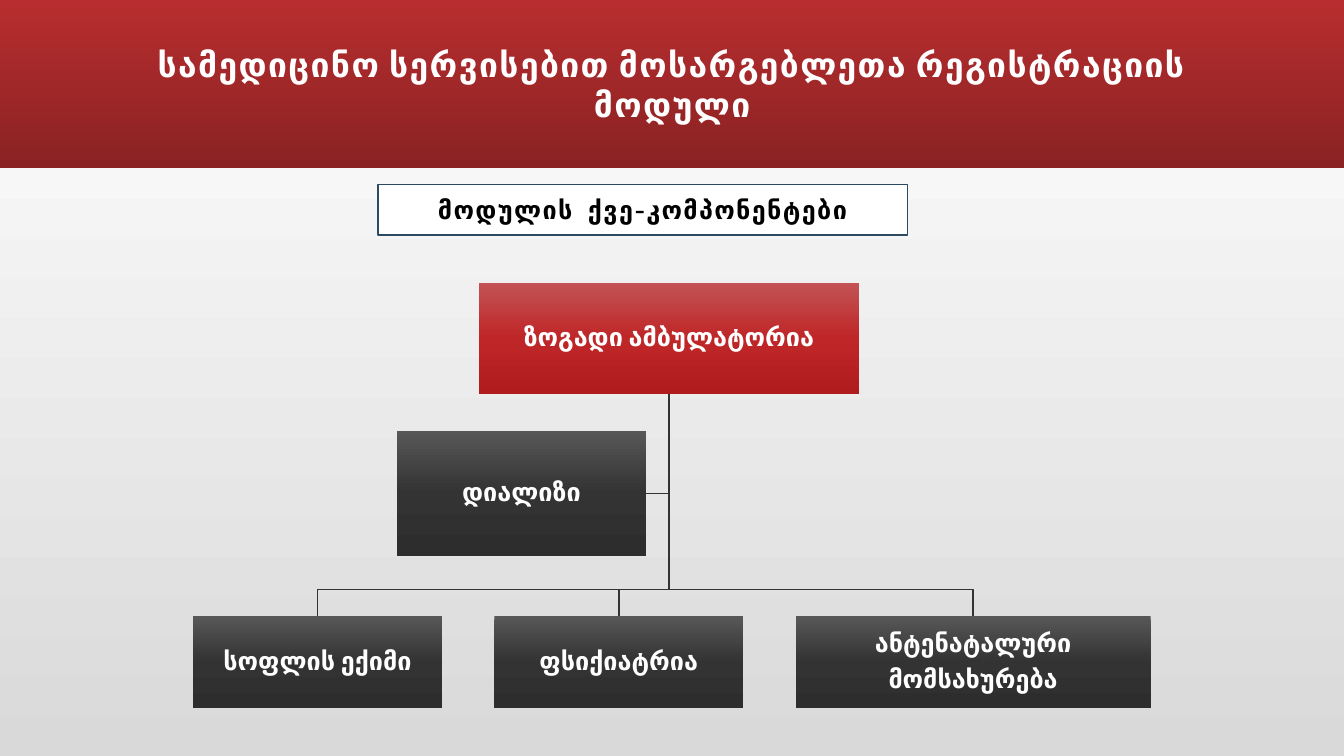
from lxml.etree import SubElement
from pptx import Presentation
from pptx.dml.color import RGBColor
from pptx.enum.shapes import MSO_SHAPE as Preset
from pptx.enum.text import MSO_ANCHOR as Anchor, MSO_AUTO_SIZE as AutoSize, PP_ALIGN as Align
from pptx.oxml.ns import qn
from pptx.util import Cm, Pt

WHITE = RGBColor(0xFF, 0xFF, 0xFF)
BLACK = RGBColor(0x00, 0x00, 0x00)
NAVY = RGBColor(0x2B, 0x4A, 0x63)
CHARCOAL = RGBColor(0x33, 0x33, 0x33)
PAGE_STOPS = (WHITE, RGBColor(0xD9, 0xD9, 0xD9))
BAND_STOPS = (RGBColor(0xB8, 0x2D, 0x2F), RGBColor(0x8A, 0x22, 0x23))
RED_STOPS = (RGBColor(0xC3, 0x53, 0x54), RGBColor(0xBF, 0x26, 0x28), RGBColor(0xB0, 0x1C, 0x1E))
DARK_STOPS = (RGBColor(0x57, 0x57, 0x57), CHARCOAL, RGBColor(0x2D, 0x2D, 0x2D))

FRAME_FORMAT = {"word_wrap": True, "auto_size": AutoSize.NONE, "vertical_anchor": Anchor.MIDDLE}
NODE_MARGINS = {f"margin_{side}": Cm(0.03) for side in ("left", "top", "right", "bottom")}
NODE_PARA = {"line_spacing": 0.9, "space_after": Pt(6.3)}


def apply_format(target, values):
    """Set every attribute named in a dict of format values."""
    for name, value in values.items():
        setattr(target, name, value)


def paint_gradient(fill, host, colors):
    """Fill from top to bottom with evenly spaced colours."""
    fill.gradient()
    fill.gradient_angle = 270
    stops = next(host.iter(qn("a:gsLst")))
    for stop in list(stops):
        stops.remove(stop)
    for index, color in enumerate(colors):
        position = 100000 * index // (len(colors) - 1)
        stop = SubElement(stops, qn("a:gs"), pos=str(position))
        SubElement(stop, qn("a:srgbClr"), val=str(color))


def write_text(shape, lines, size, color, tracking=0, para_format=None, margins=None):
    """Write centred bold lines into a shape."""
    frame = shape.text_frame
    apply_format(frame, {**FRAME_FORMAT, **(margins or {})})
    for index, line in enumerate(lines):
        para = frame.add_paragraph() if index else frame.paragraphs[0]
        apply_format(para, {"alignment": Align.CENTER, **(para_format or {})})
        span = para.add_run()
        span.text = line
        apply_format(span.font, {"name": "Cabin", "size": Pt(size), "bold": True})
        span.font.color.rgb = color
        if tracking:
            span.font._element.set("spc", str(tracking * 100))


def add_box(page, box, colors):
    """Add a flat rectangle with a solid or gradient fill and no line."""
    shape = page.shapes.add_shape(Preset.RECTANGLE, *map(Cm, box))
    shape.shadow.inherit = False
    shape.line.fill.background()
    if len(colors) > 1:
        paint_gradient(shape.fill, shape._element, colors)
    else:
        shape.fill.solid()
        shape.fill.fore_color.rgb = colors[0]
    return shape


def add_header(page, box):
    """Place the title placeholder over a full-width band."""
    left, top, width, height = box
    band = add_box(page, box, BAND_STOPS)
    page.shapes._spTree.insert(2, band._element)
    title = page.shapes.title
    places = (left + 2.97, top + 0.28, width - 5.93, height - 0.57)
    apply_format(title, dict(zip(("left", "top", "width", "height"), map(Cm, places))))
    write_text(title, ["სამედიცინო სერვისებით მოსარგებლეთა რეგისტრაციის მოდული"], 24, WHITE,
               tracking=1, para_format={"space_before": Pt(18), "line_spacing": 1.0})


def add_subtitle(page, box):
    """Add the outlined caption above the chart."""
    caption = add_box(page, box, (WHITE,))
    caption.line.color.rgb = NAVY
    caption.line.width = Pt(1)
    write_text(caption, ["მოდულის  ქვე-კომპონენტები"], 18, BLACK, tracking=1)


def add_branch(page, points):
    """Draw one angular branch line through the points."""
    start, *rest = [(Cm(x), Cm(y)) for x, y in points]
    builder = page.shapes.build_freeform(*start)
    builder.add_line_segments(rest, close=False)
    branch = builder.convert_to_shape()
    branch.shadow.inherit = False
    branch.fill.background()
    branch.line.color.rgb = CHARCOAL
    branch.line.width = Pt(1)


def add_node(page, box, lines, colors):
    """Add one labelled node of the chart."""
    node = add_box(page, box, colors)
    write_text(node, lines, 18, WHITE, para_format=NODE_PARA, margins=NODE_MARGINS)


def add_hierarchy(page, box):
    """Draw the root, its assistant and the row of leaves with their branches."""
    left, top, width, height = box
    root = (left + 7.2, top, 9.58, 2.82)
    assistant = (left + 5.14, top + 3.75, 6.27, 3.13)
    trunk, root_bottom = root[0] + root[2] / 2, top + root[3]
    leaf_height, gap = 2.31, 1.32
    leaf_top = top + height - leaf_height
    bus = leaf_top - 0.67

    middle = assistant[1] + assistant[3] / 2
    add_branch(page, [(trunk, root_bottom), (trunk, middle), (assistant[0] + assistant[2], middle)])
    leaf_left = left
    for leaf_width, lines in ((6.27, ["სოფლის ექიმი"]), (6.27, ["ფსიქიატრია"]),
                              (8.95, ["ანტენატალური", "მომსახურება"])):
        center = leaf_left + leaf_width / 2
        add_branch(page, [(trunk, root_bottom), (trunk, bus), (center, bus), (center, leaf_top)])
        add_node(page, (leaf_left, leaf_top, leaf_width, leaf_height), lines, DARK_STOPS)
        leaf_left += leaf_width + gap
    add_node(page, root, ["ზოგადი ამბულატორია"], RED_STOPS)
    add_node(page, assistant, ["დიალიზი"], DARK_STOPS)


def main():
    """Build the slide and save the deck."""
    deck = Presentation()
    deck.slide_width, deck.slide_height = Cm(33.87), Cm(19.05)
    page = deck.slides.add_slide(deck.slide_layouts[5])
    paint_gradient(page.background.fill, page._element, PAGE_STOPS)
    add_header(page, (0, 0, 33.87, 4.23))
    add_subtitle(page, (9.53, 4.65, 13.34, 1.27))
    add_hierarchy(page, (4.87, 7.12, 24.13, 10.72))
    deck.save("out.pptx")


if __name__ == "__main__":
    main()
